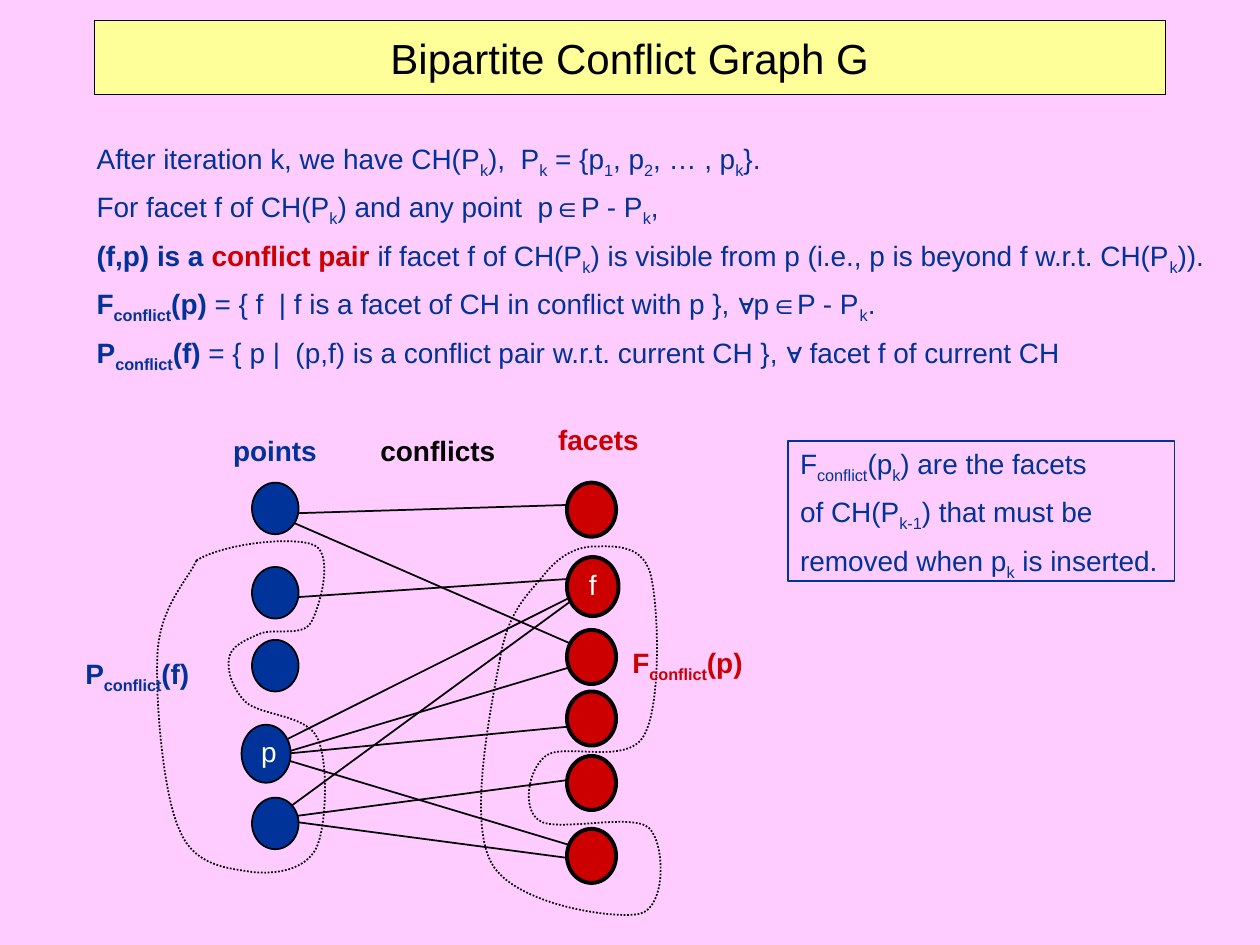
from dataclasses import dataclass

from lxml.etree import SubElement
from pptx import Presentation
from pptx.dml.color import RGBColor
from pptx.enum.dml import MSO_LINE
from pptx.enum.shapes import MSO_CONNECTOR, MSO_SHAPE
from pptx.enum.text import MSO_ANCHOR, MSO_AUTO_SIZE, PP_ALIGN
from pptx.oxml.ns import qn
from pptx.util import Cm, Pt


@dataclass(frozen=True)
class Theme:
    background: str = "FFCCFF"
    banner: str = "FFFF99"
    blue: str = "003399"
    red: str = "CC0000"
    black: str = "000000"
    white: str = "FFFFFF"
    font: str = "Arial"
    title_size: int = 24
    body_size: int = 16


THEME = Theme()

# In texts, [..] is a subscript, *..* is bold and ^..^ is red.
DEFINITIONS = [
    "After iteration k, we have CH(P[k]),  P[k] = {p[1], p[2], … , p[k]}.",
    "For facet f of CH(P[k]) and any point  p∈P - P[k],",
    "*(f,p) is a ^conflict pair^* if facet f of CH(P[k]) is visible from p "
    "(i.e., p is beyond f w.r.t. CH(P[k])).",
    "*F[conflict](p)* = { f  | f is a facet of CH in conflict with p }, ∀p∈P - P[k].",
    "*P[conflict](f)* = { p |  (p,f) is a conflict pair w.r.t. current CH }, "
    "∀ facet f of current CH",
]
REMOVAL_NOTE = [
    "F[conflict](p[k]) are the facets",
    "of CH(P[k-1]) that must be",
    "removed when p[k] is inserted.",
]
LABELS = [
    ("*F[conflict](p)*", (12.5, 12.9, 2.95, 0.86), THEME.red),
    ("*P[conflict](f)*", (1.47, 13.13, 2.82, 0.86), THEME.blue),
    ("*points*", (4.45, 8.69, 2.21, 0.86), THEME.blue),
    ("*facets*", (11, 8.46, 2.13, 0.86), THEME.red),
    ("*conflicts*", (7.42, 8.69, 2.84, 0.86), THEME.black),
]
POINT_TOPS = [9.73, 11.43, 12.9, 16.08]
FACET_TOPS = [9.73, 12.7, 13.94, 15.24, 16.71]

# Start of the edges at a point: their ends at the facets
CONFLICTS = {
    (5.51, 10.36): [(12.07, 10.16), (11.86, 13.13)],
    (5.51, 12.07): [(12.07, 11.63)],
    (5.51, 15.04): [(11.86, 11.86)],
    (5.51, 15.24): [(11.86, 13.34), (11.86, 17.15)],
    (5.28, 15.24): [(11.86, 14.61)],
    (5.51, 16.51): [(11.86, 11.86), (11.86, 15.67), (11.86, 17.35)],
}

# Closed Bezier outlines: start, then two controls and an end for each curve
POINTS_REGION = [
    (3.96, 11.3),
    (4.52, 10.95), (5.97, 10.8), (6.35, 11),
    (6.73, 11.2), (6.45, 12.24), (6.27, 12.55),
    (6.1, 12.85), (5.51, 12.65), (5.23, 12.78),
    (4.95, 12.9), (4.65, 13.03), (4.62, 13.26),
    (4.57, 13.49), (4.67, 13.87), (4.95, 14.15),
    (5.26, 14.43), (6.17, 14.4), (6.4, 14.88),
    (6.63, 15.37), (6.58, 16.66), (6.38, 17.09),
    (6.15, 17.55), (5.54, 17.63), (5.08, 17.58),
    (4.62, 17.5), (3.91, 17.48), (3.61, 16.71),
    (3.28, 15.98), (3.12, 14), (3.18, 13.11),
    (3.25, 12.19), (3.81, 11.66), (3.96, 11.3),
]
FACETS_REGION = [
    (10.08, 13.28),
    (10.24, 12.32), (10.64, 11.99), (10.95, 11.61),
    (11.25, 11.23), (11.56, 11.05), (11.91, 11.02),
    (12.27, 11.02), (12.93, 10.92), (13.11, 11.56),
    (13.28, 12.19), (13.34, 14.22), (12.98, 14.83),
    (12.65, 15.44), (11.35, 14.96), (11, 15.24),
    (10.64, 15.52), (10.52, 16.31), (10.87, 16.54),
    (11.2, 16.79), (12.75, 16.38), (13.08, 16.69),
    (13.41, 16.99), (13.44, 18.29), (12.9, 18.42),
    (12.4, 18.54), (10.36, 18.24), (9.91, 17.4),
    (9.42, 16.54), (9.91, 14.2), (10.08, 13.28),
]


def apply_format(target, **values):
    for attribute, value in values.items():
        setattr(target, attribute, value)


def cm(lengths):
    return [Cm(length) for length in lengths]


def style_shape(shape, fill, line, width):
    shape.shadow.inherit = False
    if fill:
        shape.fill.solid()
        shape.fill.fore_color.rgb = RGBColor.from_string(fill)
    else:
        shape.fill.background()
    shape.line.color.rgb = RGBColor.from_string(line)
    shape.line.width = Pt(width)


def add_marked_run(paragraph, text, color, size, subscript, bold):
    if not text:
        return
    run = paragraph.add_run()
    run.text = text
    apply_format(run.font, name=THEME.font, size=Pt(size), bold=bold)
    run.font.color.rgb = RGBColor.from_string(color)
    if subscript:
        run.font._element.set("baseline", "-25000")


def write_marked(paragraph, marked, color, size):
    """Split the text at its marks and write one run for each stretch."""
    text, subscript, bold, red = "", False, False, False
    for character in marked + "\n":
        if character not in "[]*^\n":
            text += character
            continue
        add_marked_run(paragraph, text, THEME.red if red else color, size, subscript, bold)
        text = ""
        subscript = character == "["
        bold ^= character == "*"
        red ^= character == "^"


def space_by_half_line(paragraph):
    apply_format(paragraph, line_spacing=0.9, space_before=Pt(0))
    before = paragraph._p.pPr.find(qn("a:spcBef"))
    before.clear()
    SubElement(before, qn("a:spcPct")).set("val", "50000")


def write_lines(shape, lines, color, align=PP_ALIGN.LEFT, anchor=MSO_ANCHOR.TOP):
    frame = shape.text_frame
    apply_format(frame, word_wrap=False, vertical_anchor=anchor,
                 auto_size=MSO_AUTO_SIZE.SHAPE_TO_FIT_TEXT)
    for index, line in enumerate(lines):
        paragraph = frame.add_paragraph() if index else frame.paragraphs[0]
        paragraph.alignment = align
        space_by_half_line(paragraph)
        write_marked(paragraph, line, color, THEME.body_size)


def add_title(slide, title):
    banner = slide.shapes.add_shape(MSO_SHAPE.RECTANGLE, *cm((1.9, 0.42, 21.59, 1.48)))
    style_shape(banner, THEME.banner, THEME.black, 0.75)
    banner.text_frame.vertical_anchor = MSO_ANCHOR.MIDDLE
    heading = banner.text_frame.paragraphs[0]
    heading.alignment = PP_ALIGN.CENTER
    write_marked(heading, title, THEME.black, THEME.title_size)


def add_text(slide, lines, box, color):
    write_lines(slide.shapes.add_textbox(*cm(box)), lines, color)


def add_note(slide, lines, box):
    note = slide.shapes.add_shape(MSO_SHAPE.RECTANGLE, *cm(box))
    style_shape(note, None, THEME.blue, 1)
    write_lines(note, lines, THEME.blue)


def add_edge(slide, start, end):
    edge = slide.shapes.add_connector(MSO_CONNECTOR.STRAIGHT, *cm(start + end))
    edge.line.color.rgb = RGBColor.from_string(THEME.black)
    edge.line.width = Pt(1)
    SubElement(edge._element.spPr, qn("a:effectLst"))


def add_node(slide, box, fill, width, name=None):
    node = slide.shapes.add_shape(MSO_SHAPE.OVAL, *cm(box))
    style_shape(node, fill, THEME.black, width)
    if name:
        write_lines(node, [name], THEME.white, PP_ALIGN.CENTER, MSO_ANCHOR.MIDDLE)


def add_region(slide, outline):
    """Draw a dotted closed curve, joining each three segments into one Bezier."""
    start, *rest = [cm(vertex) for vertex in outline]
    builder = slide.shapes.build_freeform(*start)
    builder.add_line_segments(rest, close=True)
    region = builder.convert_to_shape()
    segments = list(region._element.iter(qn("a:lnTo")))
    for first, second, third in zip(segments[::3], segments[1::3], segments[2::3]):
        first.tag = qn("a:cubicBezTo")
        for segment in (second, third):
            first.append(segment[0])
            segment.getparent().remove(segment)
    style_shape(region, None, THEME.black, 1)
    region.line.dash_style = MSO_LINE.ROUND_DOT


def main():
    deck = Presentation()
    apply_format(deck, slide_width=Cm(25.4), slide_height=Cm(19.05))
    slide = deck.slides.add_slide(deck.slide_layouts[6])
    slide.background.fill.solid()
    slide.background.fill.fore_color.rgb = RGBColor.from_string(THEME.background)

    add_title(slide, "Bipartite Conflict Graph G")
    add_text(slide, DEFINITIONS, (1.7, 2.74, 23.06, 4.67), THEME.blue)
    add_note(slide, REMOVAL_NOTE, (15.88, 8.89, 7.8, 2.82))
    for start, ends in CONFLICTS.items():
        for end in ends:
            add_edge(slide, start, end)
    for top in POINT_TOPS:
        add_node(slide, (5.08, top, 0.94, 1.04), THEME.blue, 1)
    add_node(slide, (4.87, 14.61, 0.99, 1.17), THEME.blue, 1, "p")
    for top in FACET_TOPS:
        add_node(slide, (11.43, top, 0.99, 1.09), THEME.red, 2.25)
    add_node(slide, (11.43, 11.23, 1.04, 1.19), THEME.red, 2.25, "f")
    for outline in (POINTS_REGION, FACETS_REGION):
        add_region(slide, outline)
    for label, box, color in LABELS:
        add_text(slide, [label], box, color)
    deck.save("out.pptx")


if __name__ == "__main__":
    main()
